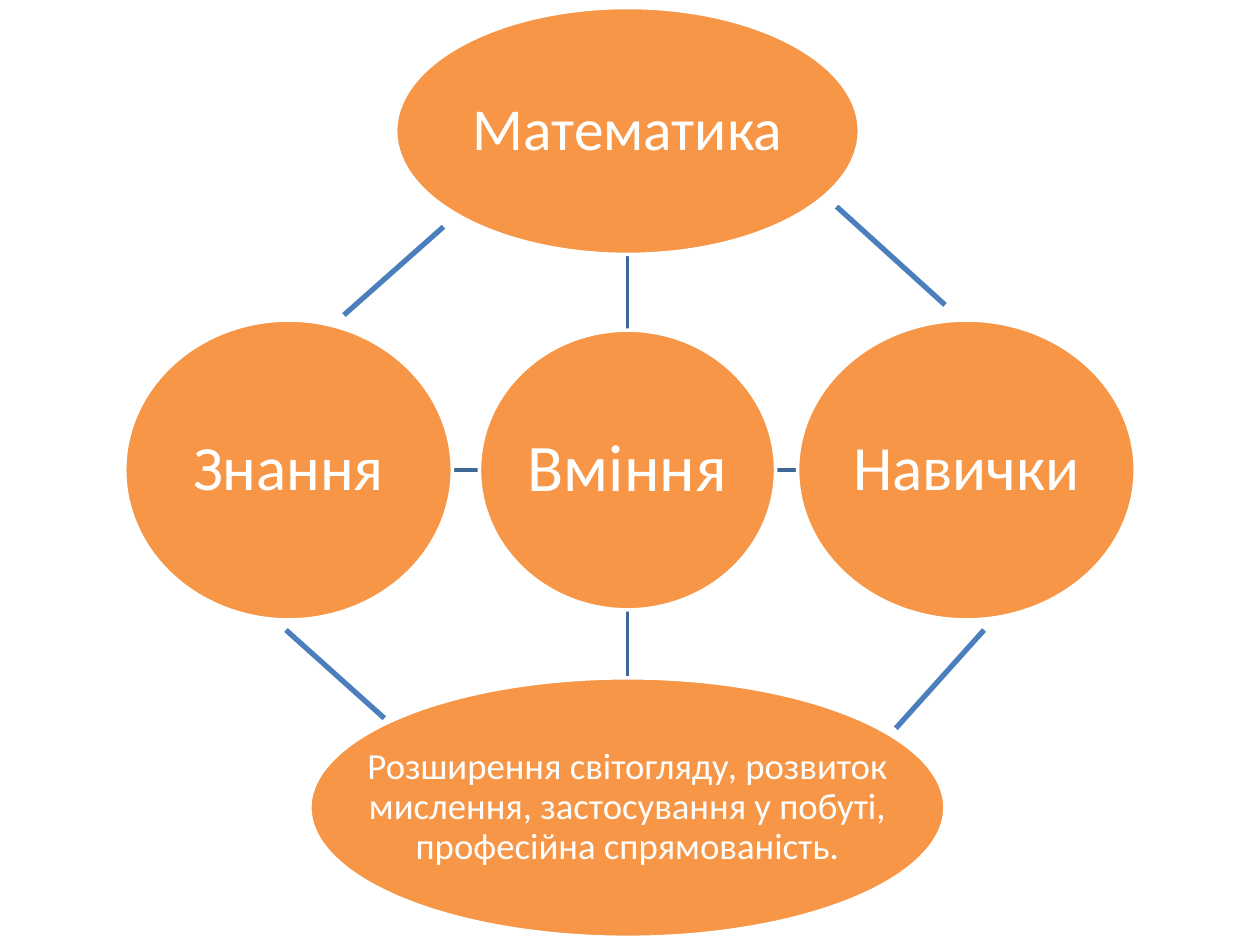
from pptx import Presentation
from pptx.dml.color import RGBColor
from pptx.enum.shapes import MSO_CONNECTOR, MSO_SHAPE
from pptx.enum.text import MSO_ANCHOR, PP_ALIGN
from pptx.oxml.ns import qn
from pptx.util import Inches, Pt
from lxml import etree

STRAIGHT = MSO_CONNECTOR.STRAIGHT
OVAL = MSO_SHAPE.OVAL
MIDDLE = MSO_ANCHOR.MIDDLE
CENTER = PP_ALIGN.CENTER

COLORS = {"oval": "F79646", "white": "FFFFFF", "spoke": "3F6797", "outer": "4B7EBC"}
AXIS_X, AXIS_Y = 4.98, 3.73  # centre of the diagram, inches

# name: (centre x, centre y, width, height, text, font size)
OVALS = {
    "skill": (AXIS_X, AXIS_Y, 2.35, 2.22, "Вміння", 38),
    "subject": (AXIS_X, 1.04, 3.68, 1.96, "Математика", 34),
    "habits": (7.67, AXIS_Y, 2.68, 2.38, "Навички", 36),
    "outcome": (AXIS_X, 6.41, 5.04, 2.06,
                "Розширення світогляду, розвиток мислення, "
                "застосування у побуті, професійна спрямованість.", 21),
    "knowledge": (2.29, AXIS_Y, 2.6, 2.38, "Знання", 36),
}
OUTER_LINES = [
    (3.52, 1.8, 2.73, 2.5),
    (7.5, 2.42, 6.64, 1.64),
    (7.81, 5, 7.11, 5.78),
    (2.27, 5, 3.05, 5.7),
]


def rgb(name):
    return RGBColor.from_string(COLORS[name])


def frame(name):
    """Left, top, width and height of an oval in inches."""
    x, y, w, h = OVALS[name][:4]
    return x - w / 2, y - h / 2, w, h


def add_line(slide, points, color, width):
    line = slide.shapes.add_connector(STRAIGHT, *(Inches(v) for v in points))
    line.line.color.rgb = rgb(color)
    line.line.width = Pt(width)
    etree.SubElement(line._element.spPr, qn("a:effectLst"))


def add_spokes(slide):
    """Join the middle oval to its four neighbours across the gaps."""
    left, top, w, h = frame("skill")
    right, bottom = left + w, top + h
    knowledge_left, _, knowledge_w, _ = frame("knowledge")
    _, subject_top, _, subject_h = frame("subject")
    for points in (
        (AXIS_X, top, AXIS_X, subject_top + subject_h),
        (right, AXIS_Y, frame("habits")[0], AXIS_Y),
        (AXIS_X, bottom, AXIS_X, frame("outcome")[1]),
        (left, AXIS_Y, knowledge_left + knowledge_w, AXIS_Y),
    ):
        add_line(slide, points, "spoke", 2)


def set_label(sp, text, size):
    tf = sp.text_frame
    tf.word_wrap = True
    tf.vertical_anchor = MIDDLE
    tf.margin_left = tf.margin_right = tf.margin_top = tf.margin_bottom = Inches(0.02)
    p = tf.paragraphs[0]
    p.text = text
    p.alignment = CENTER
    p.line_spacing = 0.9
    p.font.name = "Calibri"
    p.font.size = Pt(size)
    p.font.color.rgb = rgb("white")


def add_oval(slide, name):
    box = [Inches(v) for v in frame(name)]
    text, size = OVALS[name][4:]
    sp = slide.shapes.add_shape(OVAL, *box)
    sp.shadow.inherit = False
    sp.fill.solid()
    sp.fill.fore_color.rgb = rgb("oval")
    sp.line.color.rgb = rgb("white")
    sp.line.width = Pt(2)
    # The long text needs more width than an oval's inner text area offers.
    target = slide.shapes.add_textbox(*box) if name == "outcome" else sp
    set_label(target, text, size)


def main():
    prs = Presentation()
    prs.slide_width, prs.slide_height = Inches(10), Inches(7.5)
    slide = prs.slides.add_slide(prs.slide_layouts[6])
    add_spokes(slide)
    for name in OVALS:
        add_oval(slide, name)
    for points in OUTER_LINES:
        add_line(slide, points, "outer", 3)
    prs.save("out.pptx")


if __name__ == "__main__":
    main()
